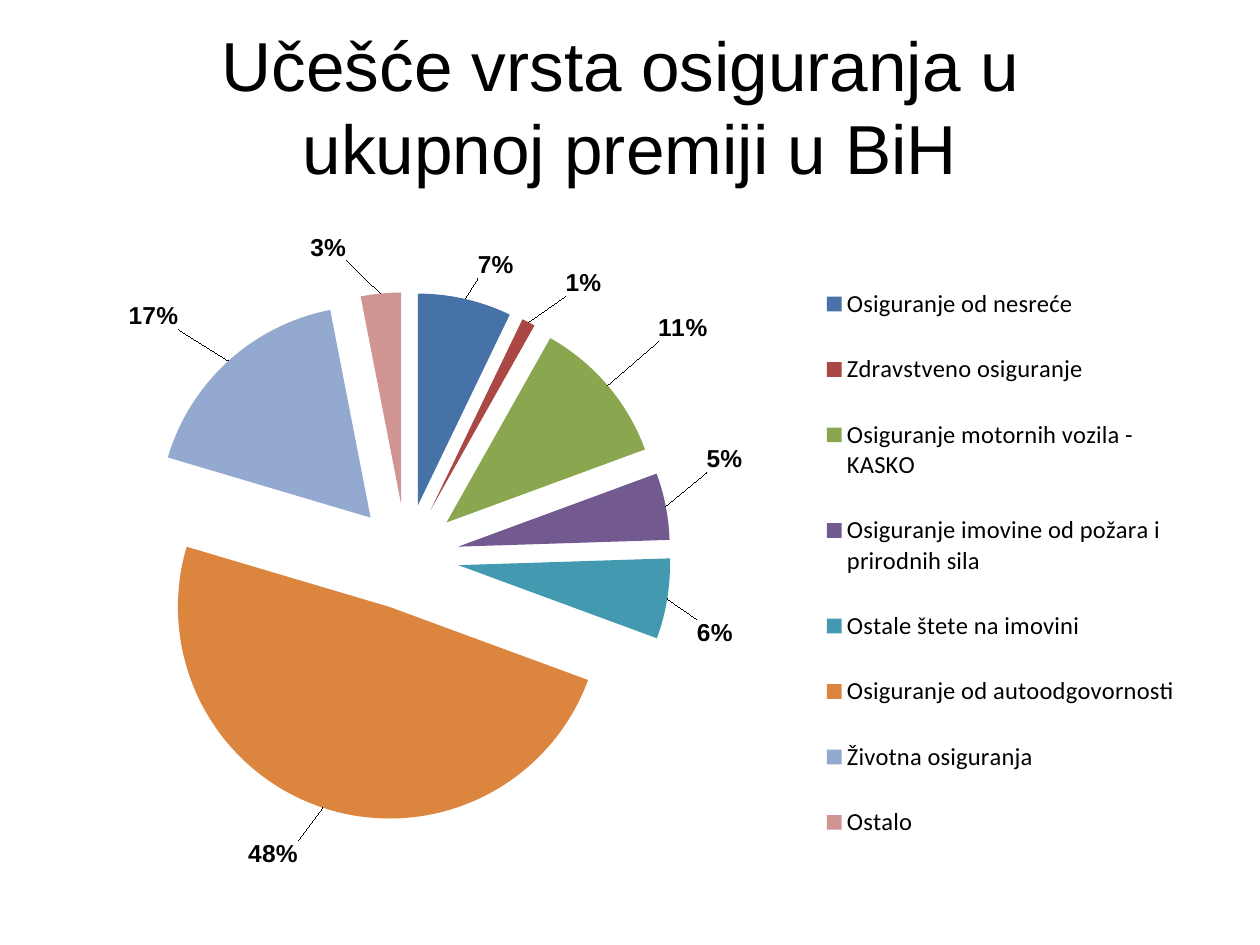
"""Build a slide with an exploded pie chart of insurance premium shares."""
from lxml.etree import SubElement
from pptx import Presentation
from pptx.chart.data import CategoryChartData
from pptx.dml.color import RGBColor
from pptx.enum.chart import XL_CHART_TYPE, XL_LABEL_POSITION, XL_LEGEND_POSITION
from pptx.enum.text import MSO_ANCHOR, PP_ALIGN
from pptx.oxml.ns import qn
from pptx.util import Inches, Pt

SHARES = [
    ("Osiguranje od nesreće", 7, "4672A8", (0.01, -0.02)),
    ("Zdravstveno osiguranje", 1, "AB4744", (0.03, -0.03)),
    ("Osiguranje motornih vozila - KASKO", 11, "8AA64F", (0.04, -0.06)),
    ("Osiguranje imovine od požara i prirodnih sila", 5, "725990", (0.03, -0.05)),
    ("Ostale štete na imovini", 6, "4299B0", (0.02, 0.03)),
    ("Osiguranje od autoodgovornosti", 48, "DC853E", (-0.02, 0.04)),
    ("Životna osiguranja", 17, "93A9CF", (-0.04, -0.04)),
    ("Ostalo", 3, "D09493", (-0.03, -0.04)),
]
PERCENT = '0"%"'


def color(value):
    """Turn a hex string into a colour."""
    return RGBColor.from_string(value)


def format_font(font, name="Arial", size=14, bold=False, fill="000000"):
    """Apply a typeface, size, weight and colour to a font."""
    font.name, font.size, font.bold = name, Pt(size), bold
    font.color.rgb = color(fill)


def write_text(frame, text, align=PP_ALIGN.CENTER, **style):
    """Fill a text frame with one formatted paragraph."""
    frame.text = text
    para = frame.paragraphs[0]
    para.alignment = align
    for span in para.runs:
        format_font(span.font, **style)


def add_layout(parent, after=None, **settings):
    """Place a manual layout in a chart part, after the named child or first."""
    for old in parent.findall(qn("c:layout")):
        parent.remove(old)
    layout = SubElement(parent, qn("c:layout"))
    manual = SubElement(layout, qn("c:manualLayout"))
    for key, value in settings.items():
        SubElement(manual, qn(f"c:{key}")).set("val", str(value))
    if after:
        parent.find(qn(after)).addnext(layout)
    else:
        parent.insert(0, layout)


class SlideBuilder:
    """Hold the slide style and add each kind of element."""

    def __init__(self, page):
        """Keep the current slide and its fonts."""
        self.page = page
        self.title_font, self.chart_font = "Arial", "Calibri"

    def title(self, text, left, top, width, height):
        """Place and fill the title placeholder."""
        box = self.page.shapes.title
        box.left, box.top = Inches(left), Inches(top)
        box.width, box.height = Inches(width), Inches(height)
        box.text_frame.word_wrap = True
        box.text_frame.vertical_anchor = MSO_ANCHOR.MIDDLE
        write_text(box.text_frame, text, name=self.title_font, size=39.6)

    def pie(self, shares, left, top, width, height):
        """Add an exploded pie with outside labels and a legend."""
        data = CategoryChartData(number_format=PERCENT)
        data.categories = [share[0] for share in shares]
        data.add_series("Series 1", [share[1] for share in shares])
        chart = self.page.shapes.add_chart(
            XL_CHART_TYPE.PIE, Inches(left), Inches(top),
            Inches(width), Inches(height), data).chart
        chart.has_title = False
        format_font(chart.font, self.chart_font, 10)
        plot = chart.plots[0]
        plot.vary_by_categories = True
        add_layout(plot._element.getparent(), layoutTarget="inner",
                   xMode="edge", yMode="edge", x=0.03, y=0.09, w=0.55, h=0.82)
        series = plot.series[0]
        self.explode(series, 25)
        self.labels(series.data_labels)
        for index, (_, _, fill, offset) in enumerate(shares):
            self.slice(series.points[index], fill, offset)
        self.legend(chart)

    def explode(self, series, percent):
        """Pull every slice out of the pie."""
        explosion = SubElement(series._element, qn("c:explosion"))
        explosion.set("val", str(percent))
        series._element.find(qn("c:tx")).addnext(explosion)

    def labels(self, labels):
        """Format the value labels of the pie."""
        labels.show_value = True
        labels.number_format, labels.number_format_is_linked = PERCENT, False
        labels.position = XL_LABEL_POSITION.OUTSIDE_END
        format_font(labels.font, self.title_font, 14, True)

    def slice(self, point, fill, offset):
        """Colour one slice and shift its label."""
        point.format.fill.solid()
        point.format.fill.fore_color.rgb = color(fill)
        label = point.data_label
        format_font(label.font, self.title_font, 14, True)
        label.position = XL_LABEL_POSITION.OUTSIDE_END
        add_layout(label._get_or_add_dLbl(), "c:idx", x=offset[0], y=offset[1])

    def legend(self, chart):
        """Add the legend to the right of the pie."""
        chart.has_legend = True
        legend = chart.legend
        legend.position = XL_LEGEND_POSITION.RIGHT
        legend.include_in_layout = False
        format_font(legend.font, self.chart_font, 14)
        add_layout(legend._element, "c:legendPos", xMode="edge", yMode="edge",
                   x=0.67, y=0.03, w=0.33, h=0.96)


def main():
    """Build and save the deck."""
    deck = Presentation()
    deck.slide_width, deck.slide_height = Inches(10), Inches(7.5)
    builder = SlideBuilder(deck.slides.add_slide(deck.slide_layouts[5]))
    builder.title("Učešće vrsta osiguranja u \vukupnoj premiji u BiH", 0.5, 0.21, 9, 1.25)
    builder.pie(SHARES, 0.51, 1.86, 8.9, 5.12)
    deck.save("out.pptx")


if __name__ == "__main__":
    main()
